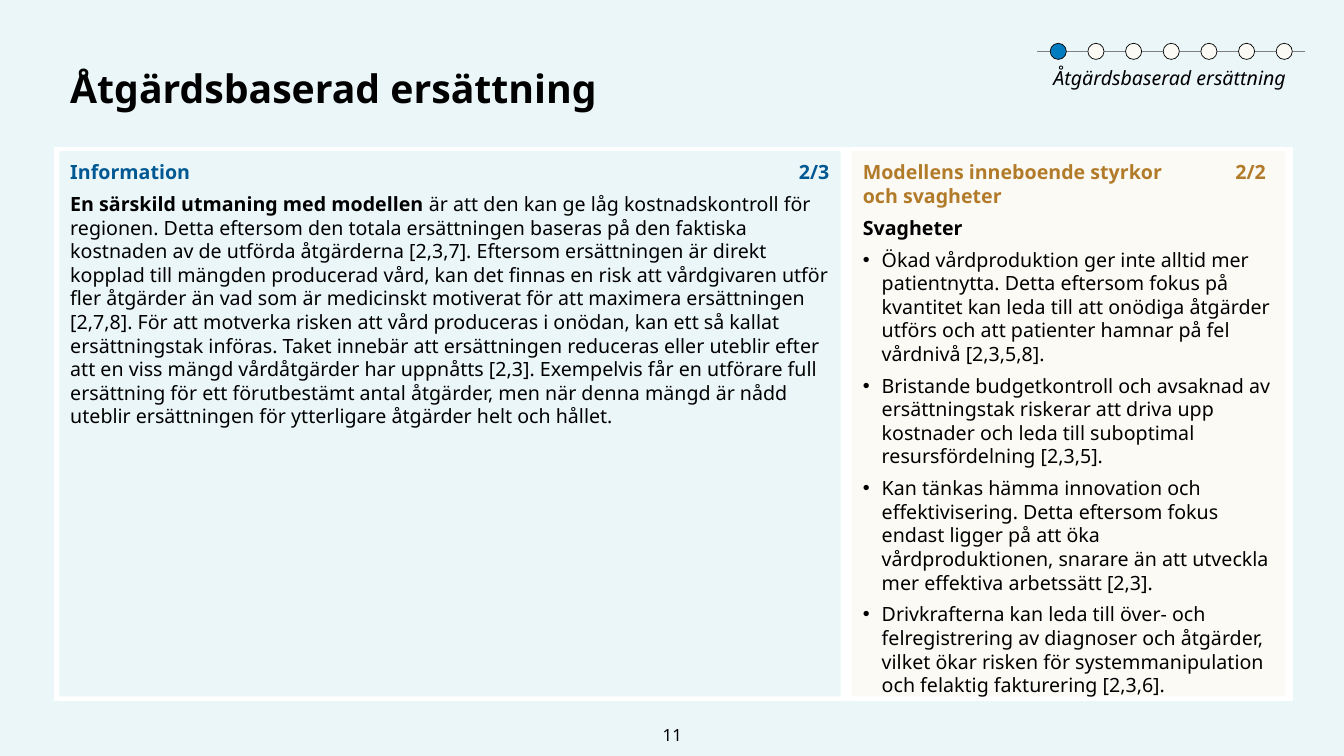
"""Build the slide on action-based reimbursement with information and weaknesses panels."""
import pptx
import pptx.util
import pptx.dml.color
import pptx.enum.shapes
import pptx.enum.text
import pptx.oxml.ns
import lxml.etree

Pt = pptx.util.Pt
RGBColor = pptx.dml.color.RGBColor
SHAPE = pptx.enum.shapes.MSO_SHAPE
ANCHOR = pptx.enum.text.MSO_ANCHOR
ALIGN = pptx.enum.text.PP_ALIGN
qn = pptx.oxml.ns.qn

ICE = RGBColor(0xEB, 0xF6, 0xF9)
WHITE = RGBColor(0xFF, 0xFF, 0xFF)
CREAM = RGBColor(0xFC, 0xFA, 0xF5)
BLACK = RGBColor(0, 0, 0)
GREY = RGBColor(0x80, 0x80, 0x80)
NAVY = RGBColor(0x00, 0x58, 0x92)
BLUE = RGBColor(0x01, 0x7C, 0xC1)
OCHRE = RGBColor(0xB2, 0x7B, 0x2A)
FONT = "Noto Sans"

INFORMATION = (
    "är att den kan ge låg kostnadskontroll för regionen. Detta eftersom den totala "
    "ersättningen baseras på den faktiska kostnaden av de utförda åtgärderna [2,3,7]. "
    "Eftersom ersättningen är direkt kopplad till mängden producerad vård, kan det finnas "
    "en risk att vårdgivaren utför fler åtgärder än vad som är medicinskt motiverat för att "
    "maximera ersättningen [2,7,8]. För att motverka risken att vård produceras i onödan, "
    "kan ett så kallat ersättningstak införas. Taket innebär att ersättningen reduceras "
    "eller uteblir efter att en viss mängd vårdåtgärder har uppnåtts [2,3]. Exempelvis får "
    "en utförare full ersättning för ett förutbestämt antal åtgärder, men när denna mängd "
    "är nådd uteblir ersättningen för ytterligare åtgärder helt och hållet."
)
WEAKNESSES = [
    "Ökad vårdproduktion ger inte alltid mer patientnytta. Detta eftersom fokus på kvantitet "
    "kan leda till att onödiga åtgärder utförs och att patienter hamnar på fel vårdnivå "
    "[2,3,5,8].",
    "Bristande budgetkontroll och avsaknad av ersättningstak riskerar att driva upp kostnader "
    "och leda till suboptimal resursfördelning [2,3,5].",
    "Kan tänkas hämma innovation och effektivisering. Detta eftersom fokus endast ligger på "
    "att öka vårdproduktionen, snarare än att utveckla mer effektiva arbetssätt [2,3].",
    "Drivkrafterna kan leda till över- och felregistrering av diagnoser och åtgärder, vilket "
    "ökar risken för systemmanipulation och felaktig fakturering [2,3,6].",
]

prs = pptx.Presentation()
prs.slide_width, prs.slide_height = Pt(960), Pt(540)
s = prs.slides.add_slide(prs.slide_layouts[6])
s.background.fill.solid()
s.background.fill.fore_color.rgb = ICE


def add_panel(shapes, kind, box, fill, line=None, width=1):
    sp = shapes.add_shape(kind, *[Pt(v) for v in box])
    sp.shadow.inherit = False
    sp.fill.solid()
    sp.fill.fore_color.rgb = fill
    if line is None:
        sp.line.fill.background()
    else:
        sp.line.color.rgb = line
        sp.line.width = Pt(width)


def add_text(box, paragraphs, size=14, align=ALIGN.LEFT, anchor=ANCHOR.TOP,
             insets=(0, 0, 7.2, 3.6), spacing=1.0, after=0):
    """Each paragraph is (bulleted, runs); each run is (text, colour, bold, italic)."""
    tf = s.shapes.add_textbox(*[Pt(v) for v in box]).text_frame
    tf.word_wrap = True
    tf.vertical_anchor = anchor
    tf.margin_left, tf.margin_top, tf.margin_right, tf.margin_bottom = [Pt(v) for v in insets]
    for i, (bulleted, runs) in enumerate(paragraphs):
        p = tf.paragraphs[0] if i == 0 else tf.add_paragraph()
        p.alignment = align
        p.line_spacing = spacing
        p.space_after = Pt(after)
        if bulleted:
            pPr = p._p.get_or_add_pPr()
            pPr.set("marL", str(Pt(13.5)))
            pPr.set("indent", str(-Pt(13.5)))
            lxml.etree.SubElement(pPr, qn("a:buFont")).set("typeface", "Arial")
            lxml.etree.SubElement(pPr, qn("a:buChar")).set("char", "•")
        for text, colour, bold, italic in runs:
            if text.startswith("\n"):
                p.add_line_break()
            r = p.add_run()
            r.text = text.lstrip("\n")
            r.font.name = FONT
            r.font.size = Pt(size)
            r.font.color.rgb = colour
            r.font.bold = bold
            r.font.italic = italic


add_panel(s.shapes, SHAPE.RECTANGLE, (39.4, 105.3, 883.6, 395.3), WHITE, WHITE)
add_panel(s.shapes, SHAPE.RECTANGLE, (608.4, 108, 309.6, 389.5), CREAM)
add_panel(s.shapes, SHAPE.RECTANGLE, (42.5, 108, 558, 389.5), ICE)

add_text((50.2, 42.5, 859.7, 57.6),
         [(False, [("Åtgärdsbaserad ersättning", BLACK, True, False)])], size=28, spacing=1.1)
add_text((443.5, 510.5, 73.4, 28.8), [(False, [("11", BLACK, False, False)])], size=12,
         align=ALIGN.CENTER, anchor=ANCHOR.MIDDLE, insets=(7.2, 3.6, 7.2, 3.6))
add_text((616.3, 114.5, 301.7, 374.4), [
    (False, [("Modellens inneboende styrkor ", OCHRE, True, False),
             ("\noch svagheter", OCHRE, True, False)]),
    (False, [("Svagheter", BLACK, True, False)]),
    *[(True, [(text, BLACK, False, False)]) for text in WEAKNESSES],
], after=6)
add_text((50.2, 114.5, 550.1, 351.4), [
    (False, [("Information", NAVY, True, False)]),
    (False, [("En särskild utmaning med modellen ", BLACK, True, False),
             (INFORMATION, BLACK, False, False)]),
], after=6)
add_text((750.2, 43.9, 177.8, 11.5),
         [(False, [("Åtgärdsbaserad ersättning", BLACK, False, True)])],
         align=ALIGN.CENTER, insets=(0, 3.6, 7.2, 3.6))
for left, page, colour in [(522.7, "2/3", NAVY), (834.5, "2/2", OCHRE)]:
    add_text((left, 114.5, 69.8, 16.6), [(False, [(page, colour, True, False)])],
             align=ALIGN.RIGHT, anchor=ANCHOR.BOTTOM, insets=(0, 3.6, 0, 0))

progress = s.shapes.add_group_shape().shapes
track = progress.add_connector(pptx.enum.shapes.MSO_CONNECTOR.STRAIGHT,
                               Pt(932.4), Pt(36.7), Pt(740.4), Pt(36.7))
track.line.color.rgb = GREY
track.line.width = Pt(1)
lxml.etree.SubElement(track._element.spPr, qn("a:effectLst"))
for i in range(7):
    add_panel(progress, SHAPE.OVAL, (750.2 + 26.9 * i, 30.95, 11.5, 11.5),
              BLUE if i == 0 else CREAM, BLACK, 0.5)

prs.save("out.pptx")
